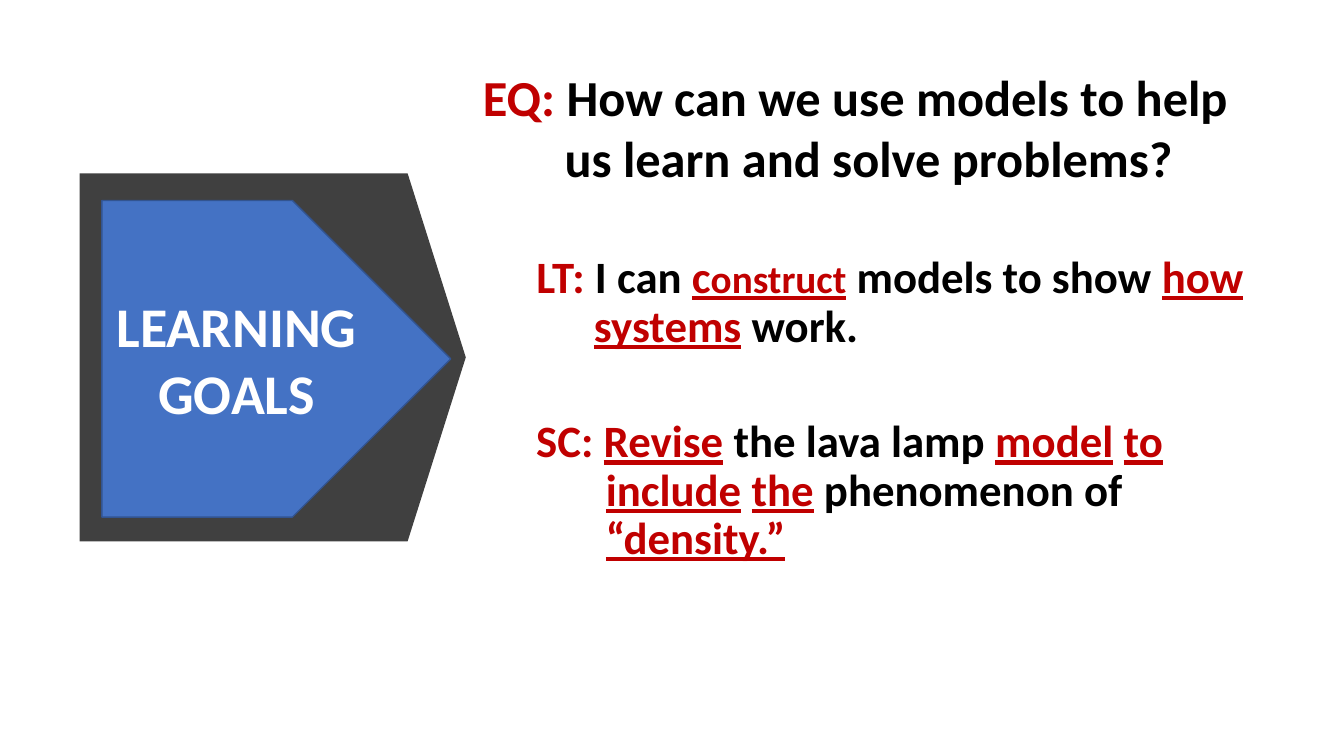
from pptx import Presentation
from pptx.dml.color import RGBColor as Rgb
from pptx.enum.shapes import MSO_SHAPE as Geo
from pptx.enum.text import MSO_ANCHOR as Anchor, MSO_AUTO_SIZE as Fit, PP_ALIGN as Align
from pptx.oxml.ns import qn
from pptx.util import Inches, Pt

HUE = {"red": "C00000", "black": "000000", "white": "FFFFFF",
       "dark": "404040", "blue": "4472C4", "edge": "325491"}
WIDE, HIGH = Inches(13.33), Inches(7.5)
COL, ROW = WIDE / 100, HIGH / 100


def tint(name):
    return Rgb.from_string(HUE[name])


def grid(x, y, w, h):
    return [round(v) for v in (x * COL, y * ROW, w * COL, h * ROW)]


def place(shape, area):
    shape.left, shape.top, shape.width, shape.height = grid(*area)
    return shape


def write(shape, runs, size, align=Align.LEFT, anchor=Anchor.TOP,
          hang=0, lines=1.0, before=0, after=0):
    frame = shape.text_frame
    frame.word_wrap = True
    frame.auto_size = Fit.NONE
    frame.vertical_anchor = anchor
    para = frame.paragraphs[0]
    para.alignment = align
    para.line_spacing = lines
    para.space_before, para.space_after = Pt(before), Pt(after)
    props = para._p.get_or_add_pPr()
    props.set("marL", str(Inches(hang)))
    props.set("indent", str(-Inches(hang)))
    props.append(props.makeelement(qn("a:buNone"), {}))
    for text, hue, *look in runs:
        run = para.add_run()
        run.text = text
        font = run.font
        font.name, font.bold = "Calibri", True
        font.size = Pt(look[1] if len(look) > 1 else size)
        font.underline = bool(look and look[0])
        font.color.rgb = tint(hue)


def block(slide, geo, area, fill, edge=None):
    shape = slide.shapes.add_shape(geo, *grid(*area))
    shape.shadow.inherit = False
    shape.fill.solid()
    shape.fill.fore_color.rgb = tint(fill)
    if edge:
        shape.line.color.rgb = tint(edge)
        shape.line.width = Pt(1)
    else:
        shape.line.fill.background()
    return shape


def goal(shape, runs, hang):
    write(shape, runs, size=32, hang=hang, lines=0.9, before=10)


def main():
    deck = Presentation()
    deck.slide_width, deck.slide_height = WIDE, HIGH
    slide = deck.slides.add_slide(deck.slide_layouts[1])

    arrow = block(slide, Geo.DOWN_ARROW, (6.6, 21.73, 27.38, 51.07), "dark")
    arrow.adjustments[0], arrow.adjustments[1] = 1, 0.158
    arrow.rotation = 270

    title = place(slide.shapes.title, (35.18, 8.13, 58.96, 19.07))
    write(title, [
        ("EQ: ", "red"),
        ("How can we use models to help us learn and solve problems?", "black"),
    ], size=36, hang=0.81, after=6)

    proof = slide.shapes.add_textbox(*grid(39.16, 54.8, 55.66, 21.07))
    goal(proof, [
        ("SC: ", "red"), ("Revise", "red", True), (" ", "red"),
        ("the lava lamp ", "black"), ("model", "red", True), (" ", "red"),
        ("to include", "red", True), (" ", "red"), ("the", "red", True),
        (" phenomenon of ", "black"), ("“density.”", "red", True),
    ], hang=0.69)

    target = place(slide.placeholders[1], (39.16, 33.07, 54.91, 15.87))
    goal(target, [
        ("LT: ", "red"), ("I can ", "black"), ("c", "red", True),
        ("onstruct", "red", True, 28), (" models to show ", "black"),
        ("how systems", "red", True), (" ", "red"), ("work.", "black"),
    ], hang=0.57)

    plate = block(slide, Geo.PENTAGON, (7.58, 26.53, 25.96, 41.87), "blue", "edge")
    write(plate, [("LEARNING GOALS", "white")], size=40,
          align=Align.CENTER, anchor=Anchor.MIDDLE)

    deck.save("out.pptx")


if __name__ == "__main__":
    main()
